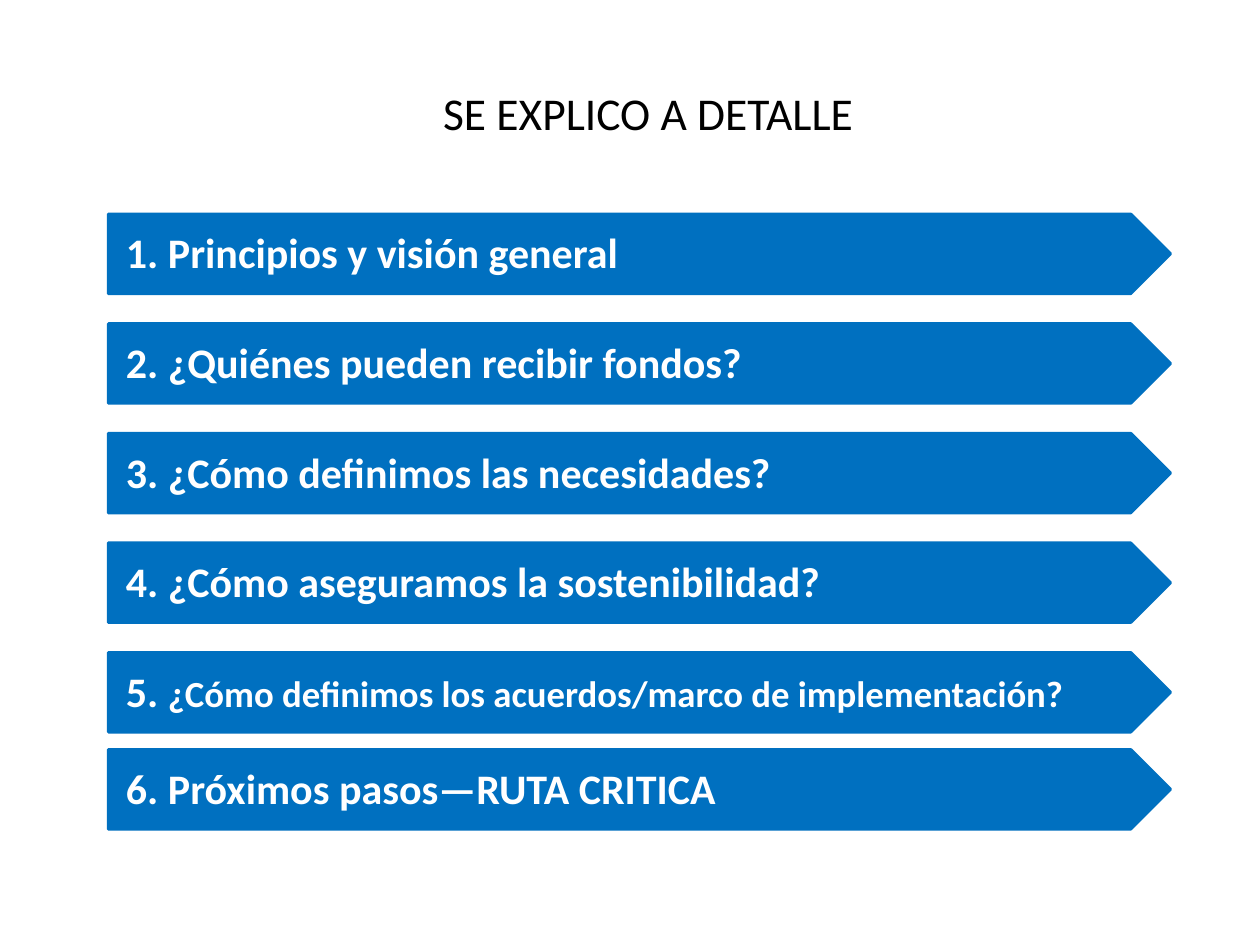
from pptx import Presentation, util as u
from pptx.dml.color import RGBColor
from pptx.enum import shapes, text

FONT, BLUE, WHITE, BLACK = "Calibri", "0070C0", "FFFFFF", "000000"

# Column of banners: the last one sits closer to its neighbour
LEFT, WIDE, HIGH = 0.86, 8.43, 0.63
TOP, STEP, LAST = 1.7, 0.87, 5.95

# Each topic is a list of (wording, size) runs
TOPICS = [
    [("1. Principios y visión general", 24)],
    [("2. ¿Quiénes pueden recibir fondos?", 24)],
    [("3. ¿Cómo definimos las necesidades?", 24)],
    [("4. ¿Cómo aseguramos la sostenibilidad?", 24)],
    [("5. ", 24), ("¿Cómo definimos los acuerdos/marco de implementación?", 21)],
    [("6. Próximos pasos—RUTA CRITICA", 24)],
]


def paint(fmt, code):
    fmt.rgb = RGBColor.from_string(code)


def write(shape, runs, color, align, anchor, inset, bold=False):
    frame = shape.text_frame
    frame.word_wrap = True
    frame.vertical_anchor = anchor
    frame.margin_left = u.Inches(inset)
    frame.margin_right = frame.margin_top = frame.margin_bottom = u.Inches(0.1)
    para = frame.paragraphs[0]
    para.alignment = align
    para.font.name = FONT
    para.font.bold = bold
    paint(para.font.color, color)
    for words, size in runs:
        run = para.add_run()
        run.text = words
        run.font.size = u.Pt(size)


def title(slide, words):
    box = slide.shapes.add_textbox(*map(u.Inches, (0.57, 0.36, 9.07, 1.06)))
    write(box, [(words, 26)], BLACK, text.PP_ALIGN.CENTER,
          text.MSO_ANCHOR.MIDDLE, 0.18)


def banner(slide, top, runs):
    shape = slide.shapes.add_shape(
        shapes.MSO_SHAPE.PENTAGON, *map(u.Inches, (LEFT, top, WIDE, HIGH)))
    shape.shadow.inherit = False
    shape.fill.solid()
    paint(shape.fill.fore_color, BLUE)
    paint(shape.line.color, BLUE)
    shape.line.width = u.Pt(1.75)
    write(shape, runs, WHITE, text.PP_ALIGN.LEFT,
          text.MSO_ANCHOR.TOP, 0.14, bold=True)


def main():
    deck = Presentation()
    deck.slide_width, deck.slide_height = u.Inches(10), u.Inches(7.5)
    slide = deck.slides.add_slide(deck.slide_layouts[6])

    # Heading
    title(slide, "SE EXPLICO A DETALLE")

    # Topics
    tops = [TOP + i * STEP for i in range(len(TOPICS) - 1)] + [LAST]
    for top, runs in zip(tops, TOPICS):
        banner(slide, top, runs)

    deck.save("out.pptx")


if __name__ == "__main__":
    main()
